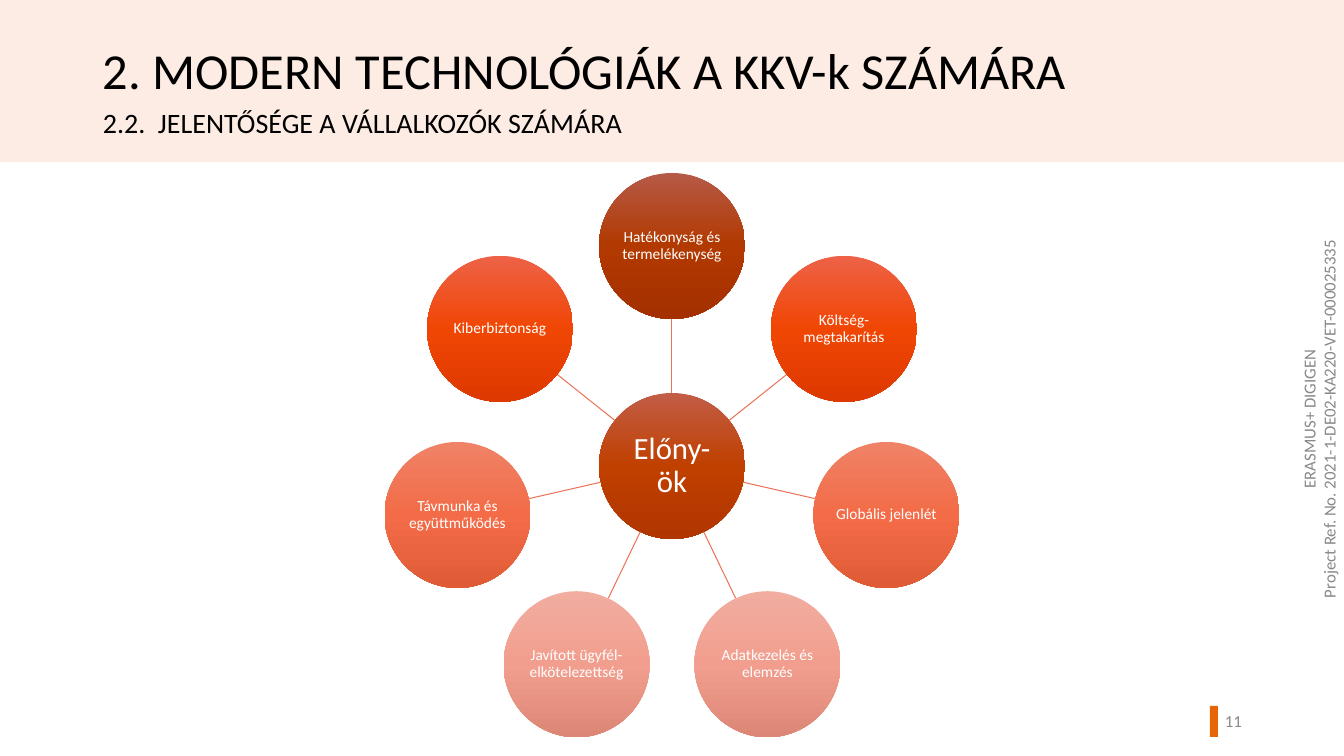
from copy import deepcopy
from math import cos, pi, sin

from lxml import etree
from pptx import Presentation
from pptx.dml.color import RGBColor
from pptx.enum.shapes import MSO_CONNECTOR, MSO_SHAPE
from pptx.enum.text import MSO_ANCHOR, PP_ALIGN
from pptx.oxml.ns import qn
from pptx.util import Pt

EMU_PER_PX = 914400 / 100.8
SLIDE_W, SLIDE_H = 1344, 756
FONT = "Calibri"

RECTANGLE, OVAL = MSO_SHAPE.RECTANGLE, MSO_SHAPE.OVAL
STRAIGHT = MSO_CONNECTOR.STRAIGHT
TOP, MIDDLE = MSO_ANCHOR.TOP, MSO_ANCHOR.MIDDLE
LEFT, CENTER, RIGHT = PP_ALIGN.LEFT, PP_ALIGN.CENTER, PP_ALIGN.RIGHT

BLACK = RGBColor(0x00, 0x00, 0x00)
WHITE = RGBColor(0xFF, 0xFF, 0xFF)
GREY = RGBColor(0x88, 0x88, 0x88)
BAND = RGBColor(0xFD, 0xEC, 0xE3)
ACCENT = RGBColor(0xE8, 0x65, 0x07)
SPOKE = RGBColor(0xEA, 0x74, 0x58)


def shades(*hexes):
    return [RGBColor.from_string(value) for value in hexes]


HUB_SHADES = shades("C25D47", "C04000", "B13500")
RUST = shades("B55A47", "B23900", "A43000")
ORANGE = shades("EE6248", "F04604", "DD3900")
CORAL = shades("EF8267", "F36C47", "DF5B36")
PINK = shades("F1ADA0", "F29E8E", "DC8776")

HUB_LINES = ["Előny-", "ök"]
BENEFITS = [  # clockwise from the top
    (["Hatékonyság és termelékenység"], RUST),
    (["Költség-", "megtakarítás"], ORANGE),
    (["Globális jelenlét"], CORAL),
    (["Adatkezelés és elemzés"], PINK),
    (["Javított ügyfél-", "elkötelezettség"], PINK),
    (["Távmunka és együttműködés"], CORAL),
    (["Kiberbiztonság"], ORANGE),
]


def px(length):
    return round(length * EMU_PER_PX)


def px_box(*lengths):
    return [px(length) for length in lengths]


def write(shape, lines, size, color, align, anchor, inset_x, inset_y,
          spacing=None, tab=None):
    frame = shape.text_frame
    frame.word_wrap = True
    frame.vertical_anchor = anchor
    frame.margin_left = frame.margin_right = px(inset_x)
    frame.margin_top = frame.margin_bottom = px(inset_y)
    frame.text = "\n".join(lines)
    for paragraph in frame.paragraphs:
        if tab:
            tabs = etree.SubElement(paragraph._p.get_or_add_pPr(), qn("a:tabLst"))
            etree.SubElement(tabs, qn("a:tab"), pos=str(px(tab)), algn="l")
        paragraph.alignment = align
        if spacing:
            paragraph.line_spacing = spacing
        for run in paragraph.runs:
            run.font.name = FONT
            run.font.size = Pt(size)
            run.font.color.rgb = color


def add_label(slide, box, lines, size, color, align, anchor, **layout):
    label = slide.shapes.add_textbox(*px_box(*box))
    write(label, lines, size, color, align, anchor, 10, 5, **layout)
    return label


def add_block(slide, box, color):
    block = slide.shapes.add_shape(RECTANGLE, *px_box(*box))
    block.shadow.inherit = False
    block.fill.solid()
    block.fill.fore_color.rgb = color
    block.line.fill.background()


def add_circle(slide, center_x, center_y, radius, lines, size, colors, inset):
    circle = slide.shapes.add_shape(
        OVAL, *px_box(center_x - radius, center_y - radius, 2 * radius, 2 * radius))
    circle.shadow.inherit = False
    circle.line.fill.background()

    # Three-stop gradient running downwards
    circle.fill.gradient()
    circle.fill.gradient_angle = 270
    stop_list = circle._element.spPr.find(".//" + qn("a:gsLst"))
    stop_list.append(deepcopy(stop_list[-1]))
    for index, (stop, color) in enumerate(zip(circle.fill.gradient_stops, colors)):
        stop.position = index / 2
        stop.color.rgb = color

    write(circle, lines, size, WHITE, CENTER, MIDDLE, inset, inset, spacing=0.9)


def add_spoke(slide, start, end):
    spoke = slide.shapes.add_connector(STRAIGHT, *px_box(*start, *end))
    spoke.line.color.rgb = SPOKE
    spoke.line.width = Pt(0.75)
    etree.SubElement(spoke._element.spPr, qn("a:effectLst"))


def add_header(slide, left, top, width, height):
    add_block(slide, (left, top, width, height), BAND)
    add_label(slide, (left + 93, top + 41, 1121, 86),
              ["2. MODERN TECHNOLÓGIÁK A KKV-k SZÁMÁRA"],
              36, BLACK, LEFT, TOP, spacing=0.9)
    add_label(slide, (left + 93, top + 104, 1094, 86),
              ["2.2.\tJELENTŐSÉGE A VÁLLALKOZÓK SZÁMÁRA"],
              20, BLACK, LEFT, TOP, spacing=0.9, tab=55)


def add_benefit_wheel(slide, left, top, width, height):
    radius = 73
    orbit = 220
    hub_x, hub_y = left + width / 2, top + radius + orbit

    def on_ring(angle, distance):
        return hub_x + distance * sin(angle), hub_y - distance * cos(angle)

    add_circle(slide, hub_x, hub_y, radius, HUB_LINES, 22, HUB_SHADES, 2)
    for index, (lines, colors) in enumerate(BENEFITS):
        angle = 2 * pi * index / len(BENEFITS)
        add_spoke(slide, on_ring(angle, radius), on_ring(angle, orbit - radius))
        add_circle(slide, *on_ring(angle, orbit), radius, lines, 11, colors, 1)


def add_project_reference(slide, left, top, width, height):
    # The box is laid out flat around the same centre, then turned upright
    flat_box = (left + (width - height) / 2, top + (height - width) / 2, height, width)
    reference = add_label(
        slide, flat_box,
        ["ERASMUS+ DIGIGEN", "Project Ref. No. 2021-1-DE02-KA220-VET-000025335"],
        12, GREY, CENTER, MIDDLE)
    reference.rotation = 270


def add_page_number(slide, left, top, width, height):
    add_block(slide, (left, top + 5, 8, 31), ACCENT)
    add_label(slide, (left - 24, top, width, height), ["11"], 12, GREY, RIGHT, MIDDLE)


def main():
    deck = Presentation()
    deck.slide_width, deck.slide_height = px(SLIDE_W), px(SLIDE_H)
    slide = deck.slides.add_slide(deck.slide_layouts[6])
    add_header(slide, 0, 0, SLIDE_W, 162)
    add_project_reference(slide, 1299, 192, 40, 454)
    add_page_number(slide, 1210, 701, 66, 40)
    add_benefit_wheel(slide, 385, 173, 574, 564)
    deck.save("out.pptx")


if __name__ == "__main__":
    main()
